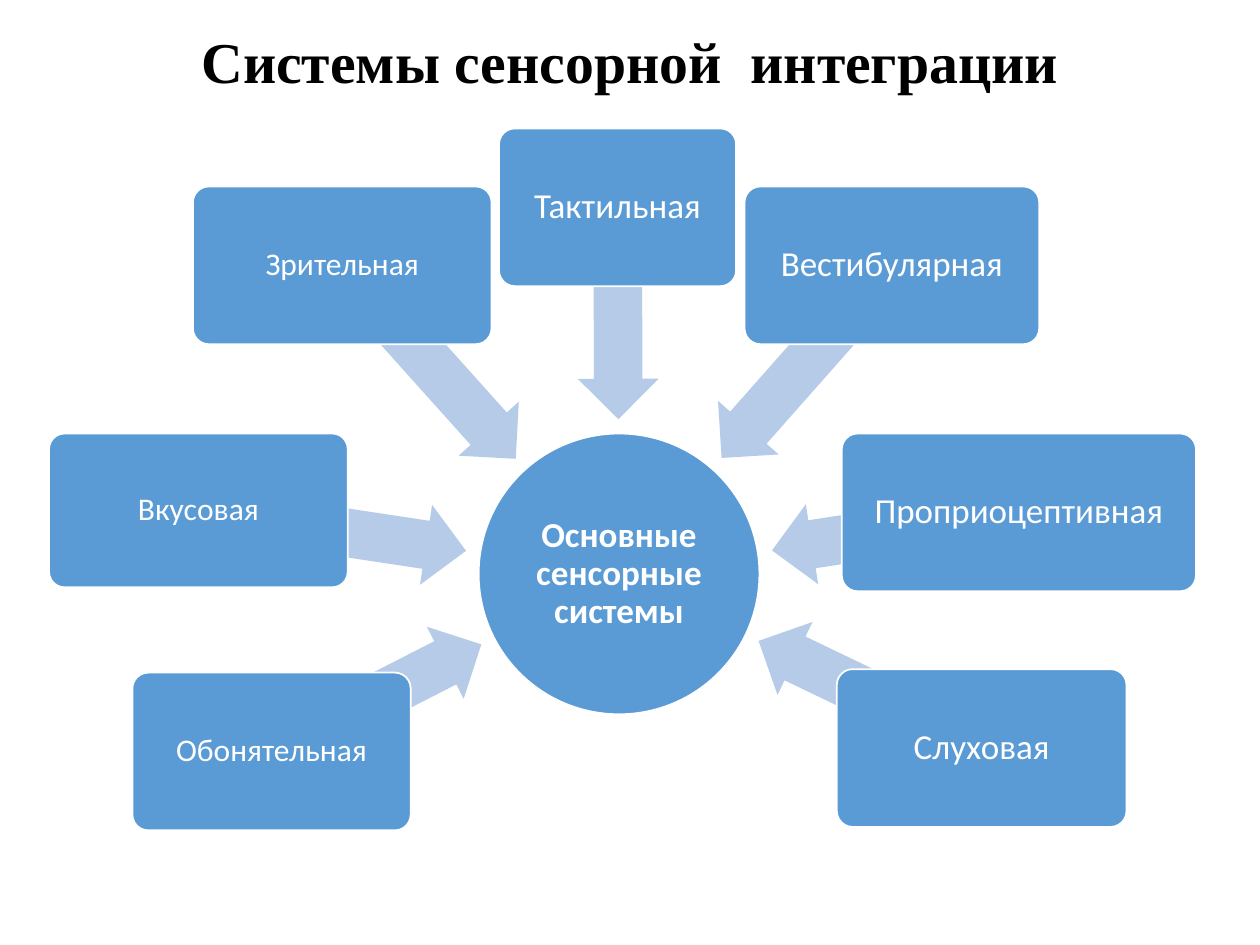
import math
from dataclasses import dataclass

from pptx import Presentation, util as u
from pptx.dml.color import RGBColor
from pptx.enum import shapes, text


@dataclass(frozen=True)
class Theme:
    fill: RGBColor = RGBColor(0x5B, 0x9B, 0xD5)
    arrow: RGBColor = RGBColor(0xB5, 0xCB, 0xE7)
    white: RGBColor = RGBColor(0xFF, 0xFF, 0xFF)
    black: RGBColor = RGBColor(0, 0, 0)
    title_font: str = "Times New Roman"
    body_font: str = "Calibri"
    title_size: int = 33
    large: int = 20
    small: int = 18


theme = Theme()


def write(box, words, inset, **font_format):
    frame = box.text_frame
    frame_format = {"word_wrap": True, "vertical_anchor": text.MSO_ANCHOR.MIDDLE}
    for side in ("left", "top", "right", "bottom"):
        frame_format[f"margin_{side}"] = u.Cm(inset)
    for name, value in frame_format.items():
        setattr(frame, name, value)
    para = frame.paragraphs[0]
    para.alignment = text.PP_ALIGN.CENTER
    para.line_spacing = 0.9
    span = para.add_run()
    span.text = words
    span.font.color.rgb = font_format.pop("color")
    for name, value in font_format.items():
        setattr(span.font, name, value)


def add_box(kind, left, top, width, height, fill, outline=None):
    box = page.shapes.add_shape(kind, *map(u.Cm, (left, top, width, height)))
    box.shadow.inherit = False
    box.fill.solid()
    box.fill.fore_color.rgb = fill
    if outline is None:
        box.line.fill.background()
    else:
        box.line.color.rgb = outline
        box.line.width = u.Pt(1)
    return box


deck = Presentation()
deck.slide_width, deck.slide_height = u.Cm(25.4), u.Cm(19.05)
page = deck.slides.add_slide(deck.slide_layouts[6])

# Title
title = page.shapes.add_textbox(u.Cm(1.27), u.Cm(0.43), u.Cm(22.86), u.Cm(1.75))
write(title, "Системы сенсорной  интеграции", 0.13, color=theme.black,
      name=theme.title_font, size=u.Pt(theme.title_size), bold=True)

# Central circle
hub_x, hub_y, hub_size = 12.48, 11.57, 5.66
hub = add_box(shapes.MSO_SHAPE.OVAL, hub_x - hub_size / 2, hub_y - hub_size / 2,
              hub_size, hub_size, theme.fill, theme.white)
write(hub, "Основные сенсорные системы", 0.03, color=theme.white,
      name=theme.body_font, size=u.Pt(theme.large), bold=True)

# Sensory systems: label, left, top, width, height, type size
systems = [
    ("Обонятельная", 2.67, 13.56, 5.61, 3.18, theme.small),
    ("Вкусовая", 0.99, 8.74, 6.02, 3.1, theme.small),
    ("Зрительная", 3.89, 3.76, 6.02, 3.18, theme.small),
    ("Тактильная", 10.06, 2.59, 4.78, 3.18, theme.large),
    ("Вестибулярная", 15.01, 3.76, 5.94, 3.18, theme.large),
    ("Проприоцептивная", 16.97, 8.74, 7.14, 3.18, theme.large),
    ("Слуховая", 16.87, 13.49, 5.84, 3.18, theme.large),
]
tip_radius, arrow_height = 3.12, 1.63

for label, left, top, width, height, size in systems:
    # Arrow from the middle of the box towards the centre of the circle
    dx = left + width / 2 - hub_x
    dy = top + height / 2 - hub_y
    distance, angle = math.hypot(dx, dy), math.atan2(dy, dx)
    length = distance - tip_radius
    middle = tip_radius + length / 2
    arrow = add_box(shapes.MSO_SHAPE.LEFT_ARROW,
                    hub_x + middle * math.cos(angle) - length / 2,
                    hub_y + middle * math.sin(angle) - arrow_height / 2,
                    length, arrow_height, theme.arrow)
    arrow.adjustments[0], arrow.adjustments[1] = 0.6, 0.5
    arrow.rotation = math.degrees(angle) % 360

    # Box over the arrow's tail
    box = add_box(shapes.MSO_SHAPE.ROUNDED_RECTANGLE, left, top, width, height,
                  theme.fill, theme.white)
    box.adjustments[0] = 0.1
    write(box, label, 0.1, color=theme.white, name=theme.body_font,
          size=u.Pt(size), bold=False)

deck.save("out.pptx")
